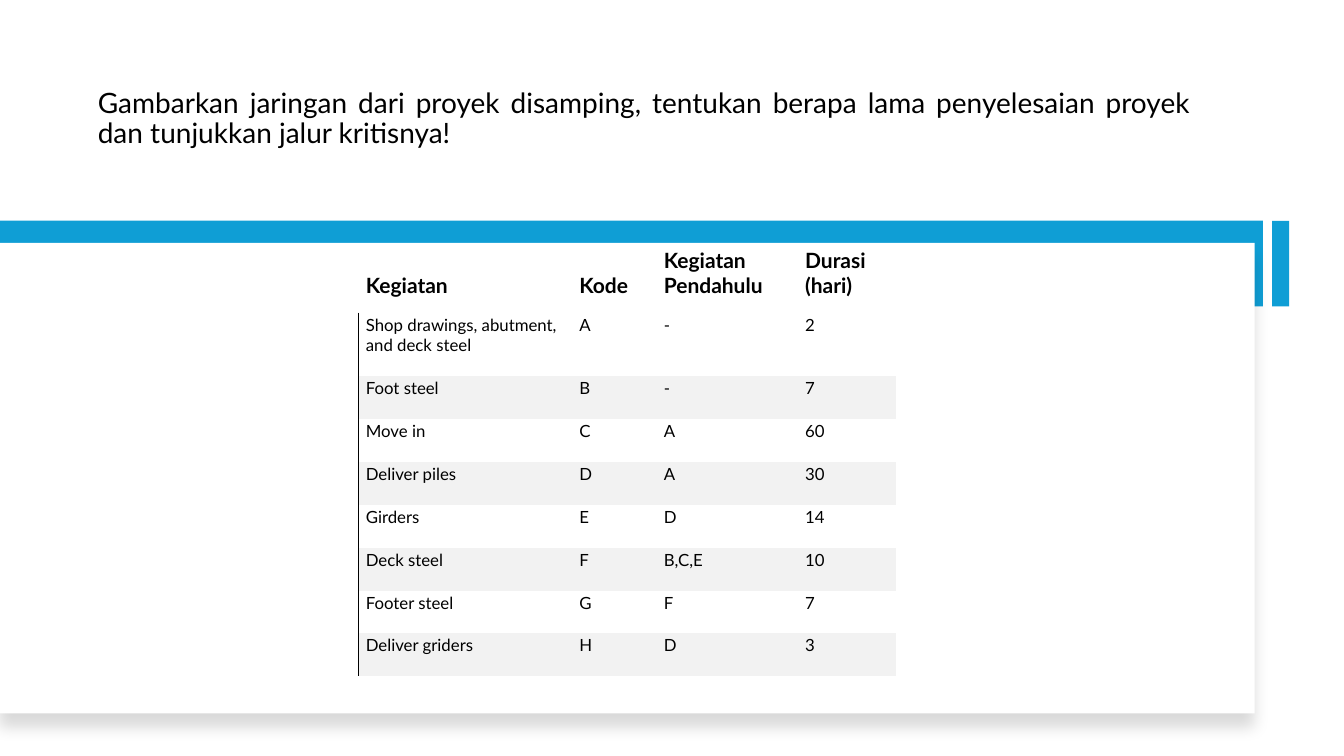
from lxml import etree
from pptx import Presentation
from pptx.dml.color import RGBColor
from pptx.enum.shapes import MSO_SHAPE
from pptx.enum.text import MSO_ANCHOR, PP_ALIGN
from pptx.oxml import parse_xml
from pptx.oxml.ns import qn
from pptx.util import Cm, Pt

RECT = MSO_SHAPE.RECTANGLE
TOP, MIDDLE, BOTTOM = MSO_ANCHOR.TOP, MSO_ANCHOR.MIDDLE, MSO_ANCHOR.BOTTOM
JUSTIFY = PP_ALIGN.JUSTIFY
NS = 'xmlns:a="http://schemas.openxmlformats.org/drawingml/2006/main"'
PLAIN = "{2D5ABB26-0587-4C30-8999-92F81FD0307C}"
FONT = "Lato"
BLACK, WHITE, BLUE, GREY = "000000", "FFFFFF", "0F9ED5", "F2F2F2"

TASK = ("Gambarkan jaringan dari proyek disamping, tentukan berapa lama "
        "penyelesaian proyek dan tunjukkan jalur kritisnya!")
ROWS = [
    ("Kegiatan", "Kode", "Kegiatan Pendahulu", "Durasi (hari)"),
    ("Shop drawings, abutment, and deck steel", "A", "-", "2"),
    ("Foot steel", "B", "-", "7"),
    ("Move in", "C", "A", "60"),
    ("Deliver piles", "D", "A", "30"),
    ("Girders", "E", "D", "14"),
    ("Deck steel", "F", "B,C,E", "10"),
    ("Footer steel", "G", "F", "7"),
    ("Deliver griders", "H", "D", "3"),
]
WIDTHS = [5.38, 2.13, 3.56, 2.46]
HEIGHTS = [1.96, 1.6] + [1.08] * 7


def paint(fill, color):
    fill.solid()
    fill.fore_color.rgb = RGBColor.from_string(color)


def style(para, size, bold=False):
    for run in para.runs:
        run.font.name = FONT
        run.font.size = Pt(size)
        run.font.bold = bold
        run.font.color.rgb = RGBColor.from_string(BLACK)


def add_box(slide, left, top, width, height, color, turn=0):
    box = slide.shapes.add_shape(RECT, Cm(left), Cm(top), Cm(width), Cm(height))
    box.shadow.inherit = False
    box.rotation = turn
    paint(box.fill, color)
    box.line.fill.background()
    return box


def add_shade(box):
    effects = box._element.spPr.find(qn("a:effectLst"))
    effects.append(parse_xml(
        f'<a:outerShdw {NS} blurRad="{Pt(11)}" dist="{Pt(10)}" dir="5400000" '
        f'algn="t" rotWithShape="0"><a:srgbClr val="{BLACK}">'
        '<a:alpha val="15000"/></a:srgbClr></a:outerShdw>'))


def set_title(slide):
    title = slide.shapes.title
    title.left, title.top = Cm(2.21), Cm(0.97)
    title.width, title.height = Cm(28.04), Cm(4.06)
    frame = title.text_frame
    frame.text = TASK
    frame.word_wrap = True
    frame.vertical_anchor = MIDDLE
    para = frame.paragraphs[0]
    para.alignment = JUSTIFY
    para.line_spacing = 0.9
    para.space_before = Pt(10)
    style(para, 20)


def add_edge(cell):
    edge = parse_xml(
        f'<a:lnL {NS} w="{Pt(0.75)}"><a:solidFill><a:srgbClr val="{BLACK}"/>'
        '</a:solidFill></a:lnL>')
    cell._tc.get_or_add_tcPr().insert(0, edge)


def fill_cell(cell, text, row, col):
    head = row == 0
    cell.text_frame.text = text
    cell.margin_left, cell.margin_right = Cm(0.18), Cm(0.25)
    cell.margin_top, cell.margin_bottom = Cm(0.05), Cm(0.36)
    cell.vertical_anchor = BOTTOM if head else TOP
    style(cell.text_frame.paragraphs[0], 15 if head else 12, head)
    if row and row % 2 == 0:
        paint(cell.fill, GREY)
    else:
        cell.fill.background()
    if col == 0 and not head:
        add_edge(cell)


def add_grid(slide):
    table = slide.shapes.add_table(
        len(ROWS), len(WIDTHS), Cm(9.04), Cm(5.92),
        Cm(sum(WIDTHS)), Cm(sum(HEIGHTS))).table
    props = table._tbl.tblPr
    mark = props.find(qn("a:tableStyleId"))
    if mark is None:
        mark = etree.SubElement(props, qn("a:tableStyleId"))
    mark.text = PLAIN
    for col, width in zip(table.columns, WIDTHS):
        col.width = Cm(width)
    for row, height in zip(table.rows, HEIGHTS):
        row.height = Cm(height)
    for i, texts in enumerate(ROWS):
        for j, text in enumerate(texts):
            fill_cell(table.cell(i, j), text, i, j)


def main():
    deck = Presentation()
    deck.slide_width, deck.slide_height = Cm(33.87), Cm(19.05)
    slide = deck.slides.add_slide(deck.slide_layouts[5])
    paint(slide.background.fill, WHITE)
    add_box(slide, 0, 5.56, 31.83, 2.16, BLUE)
    add_shade(add_box(slide, 0, 6.12, 31.62, 11.86, WHITE))
    set_title(slide)
    add_box(slide, 31.19, 6.43, 2.16, 0.43, BLUE, 90)
    add_grid(slide)
    deck.save("out.pptx")


if __name__ == "__main__":
    main()
